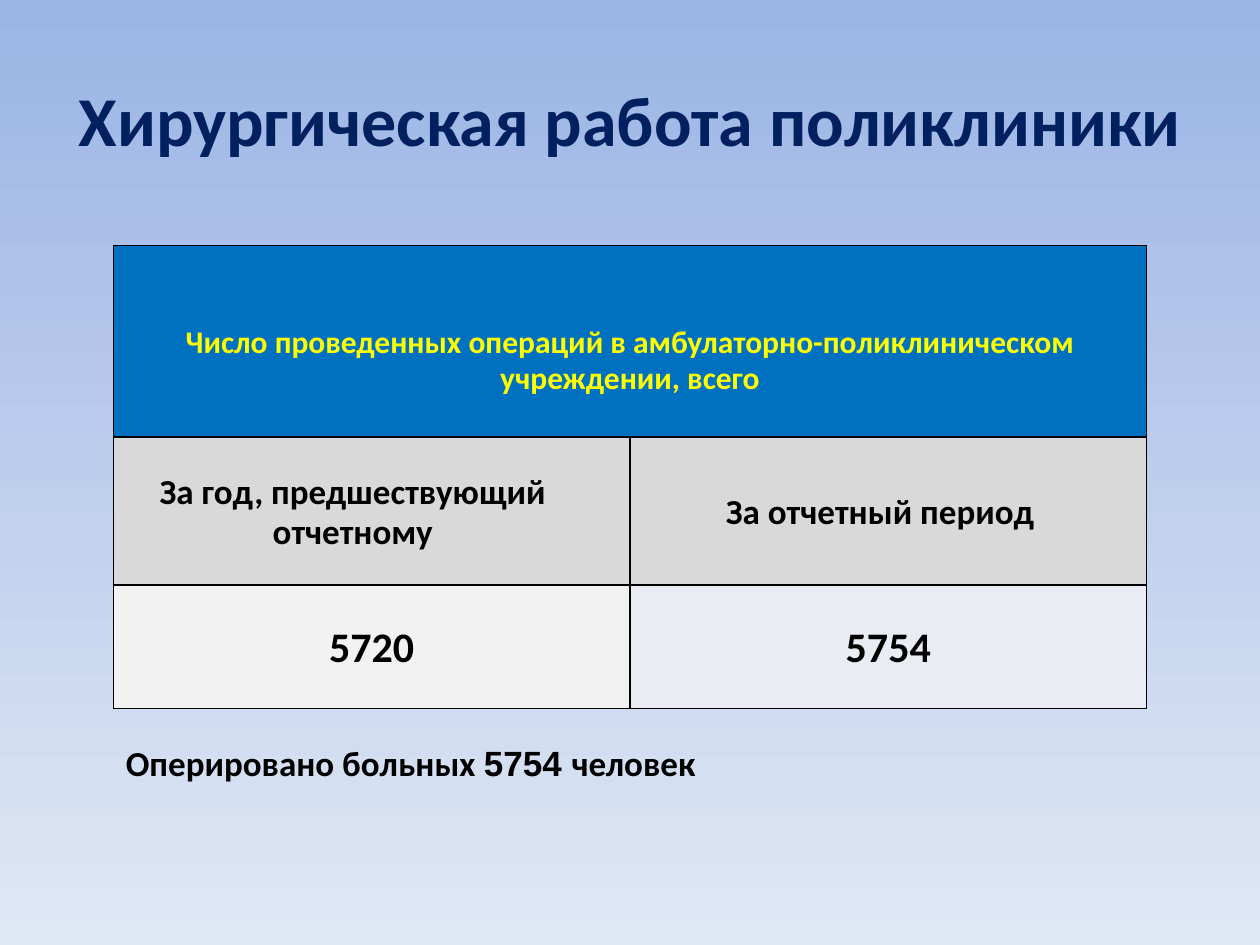
from dataclasses import dataclass

from lxml.etree import SubElement
from pptx import Presentation
from pptx.dml.color import RGBColor as RGB
from pptx.enum.text import MSO_ANCHOR as Anchor, PP_ALIGN as Align
from pptx.oxml.ns import qn
from pptx.util import Inches, Pt


@dataclass(frozen=True)
class Theme:
    font: str = "Calibri"
    digits_font: str = "Arial"
    sky: str = "9AB4E4"
    mist: str = "E0E8F5"
    navy: str = "002060"
    blue: str = "0070C0"
    yellow: str = "FFFF00"
    black: str = "000000"
    grey: str = "D9D9D9"
    light: str = "F2F2F2"
    pale: str = "E9ECF3"
    title: int = 40
    header: int = 18
    body: int = 20
    number: int = 24


class Deck:
    def __init__(self, theme, width=10, height=7.5):
        self.theme = theme
        self.prs = Presentation()
        self.prs.slide_width, self.prs.slide_height = Inches(width), Inches(height)
        self.s = self.prs.slides.add_slide(self.prs.slide_layouts[6])

    def box(self, x, y, w, h):
        """Turn shares of the slide's size into lengths."""
        sw, sh = self.prs.slide_width, self.prs.slide_height
        return int(x * sw), int(y * sh), int(w * sw), int(h * sh)

    def background(self, top, bottom):
        fill = self.s.background.fill
        fill.gradient()
        fill.gradient_angle = 270
        for stop, color in zip(fill.gradient_stops, (top, bottom)):
            stop.color.rgb = RGB.from_string(color)

    def paragraph(self, tf, runs, size, color, align=Align.CENTER, spacing=1.0):
        """Fill a frame with one bold paragraph of (text, font name) runs."""
        tf.word_wrap = True
        p = tf.paragraphs[0]
        p.alignment, p.line_spacing = align, spacing
        for text, name in runs:
            r = p.add_run()
            r.text = text
            for key, value in {"name": name, "size": Pt(size), "bold": True}.items():
                setattr(r.font, key, value)
            r.font.color.rgb = RGB.from_string(color)

    def text(self, place, runs, size, color, anchor=Anchor.TOP, **layout):
        tf = self.s.shapes.add_textbox(*self.box(*place)).text_frame
        tf.vertical_anchor = anchor
        self.paragraph(tf, runs, size, color, **layout)

    def table(self, place, row_shares, cols):
        x, y, w, h = self.box(*place)
        table = self.s.shapes.add_table(len(row_shares), cols, x, y, w, h).table
        for row, share in zip(table.rows, row_shares):
            row.height = int(h * share / sum(row_shares))
        for cell in table.iter_cells():
            self.border(cell)
        return table

    def border(self, cell):
        tc_pr = cell._tc.get_or_add_tcPr()
        for side in ("lnL", "lnR", "lnT", "lnB"):
            line = SubElement(tc_pr, qn(f"a:{side}"), w=str(Pt(1)))
            solid = SubElement(line, qn("a:solidFill"))
            SubElement(solid, qn("a:srgbClr"), val=self.theme.black)

    def cell(self, cell, text, size, color, fill, top=0.02, right=0.05):
        cell.fill.solid()
        cell.fill.fore_color.rgb = RGB.from_string(fill)
        layout = {"vertical_anchor": Anchor.MIDDLE, "margin_left": Inches(0.05),
                  "margin_right": Inches(right), "margin_top": Inches(top),
                  "margin_bottom": 0}
        for key, value in layout.items():
            setattr(cell, key, value)
        self.paragraph(cell.text_frame, [(text, self.theme.font)], size, color, spacing=0.94)


def main():
    t = Theme()
    deck = Deck(t)
    deck.background(t.sky, t.mist)
    deck.text((0.05, 0.03, 0.9, 0.19), [("Хирургическая работа поликлиники", t.font)],
              t.title, t.navy, anchor=Anchor.MIDDLE)

    table = deck.table((0.09, 0.26, 0.82, 0.49), (1.53, 1.18, 0.99), 2)
    table.cell(0, 0).merge(table.cell(0, 1))
    deck.cell(table.cell(0, 0),
              "Число проведенных операций в амбулаторно-поликлиническом учреждении, всего",
              t.header, t.yellow, t.blue, top=0.3)
    columns = (("За год, предшествующий отчетному", 0.35, "5720", t.light),
               ("За отчетный период", 0.18, "5754", t.pale))
    for c, (period, right, count, fill) in enumerate(columns):
        deck.cell(table.cell(1, c), period, t.body, t.black, t.grey, right=right)
        deck.cell(table.cell(2, c), count, t.number, t.black, fill)

    deck.text((0.09, 0.78, 0.82, 0.1),
              [("Оперировано больных ", t.font), ("5754 ", t.digits_font), ("человек", t.font)],
              t.body, t.black, align=Align.LEFT, spacing=0.98)
    deck.prs.save("out.pptx")


if __name__ == "__main__":
    main()
